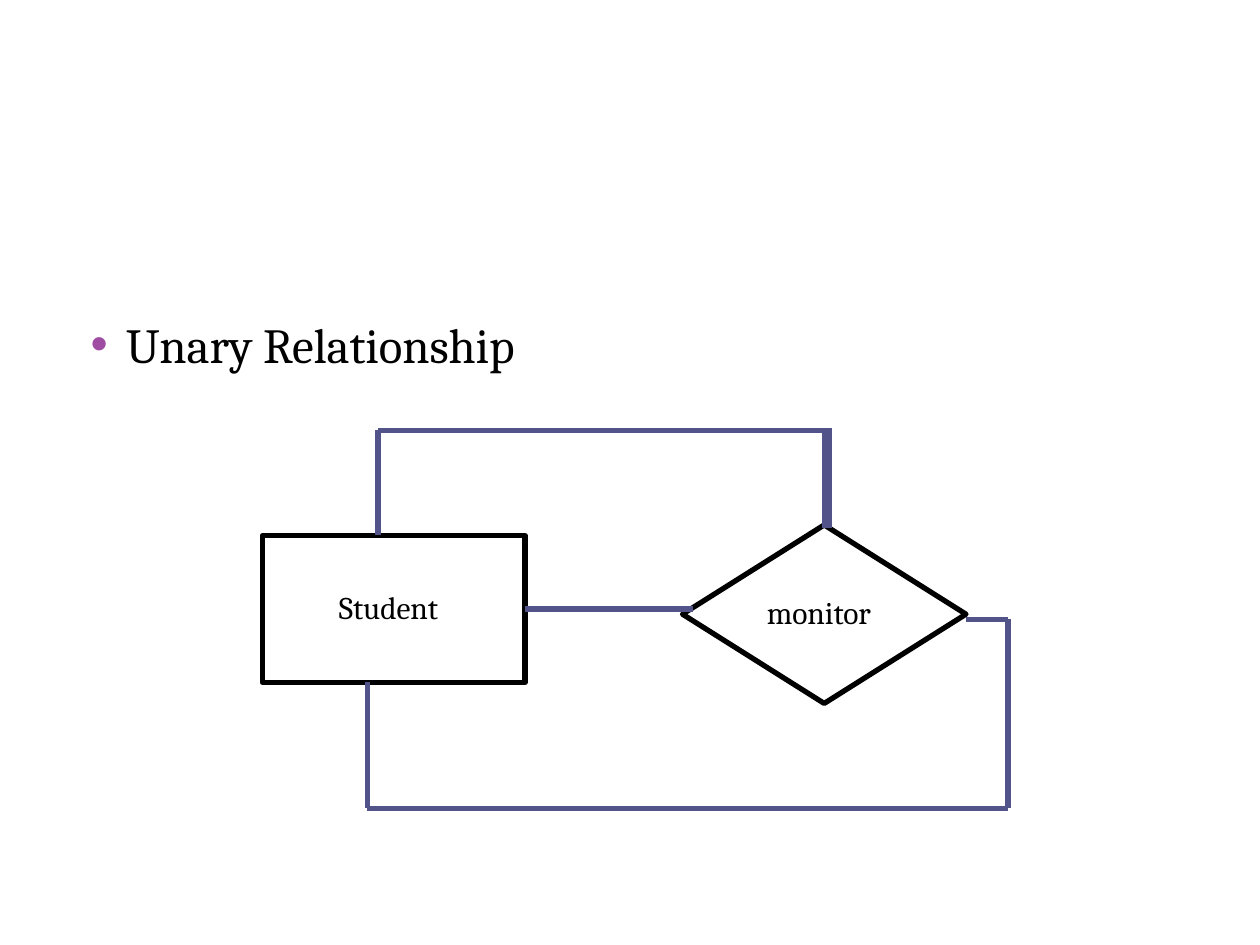
from dataclasses import dataclass

from lxml.etree import SubElement
from pptx import Presentation
from pptx.dml.color import RGBColor
from pptx.enum.shapes import MSO_CONNECTOR, MSO_SHAPE
from pptx.enum.text import MSO_ANCHOR, MSO_AUTO_SIZE, PP_ALIGN
from pptx.oxml.ns import qn
from pptx.util import Pt

BLACK = "000000"
BLUE = "525389"
PURPLE = "9F4DA2"


@dataclass
class Node:
    text: str
    kind: MSO_SHAPE
    left: float
    top: float
    width: float
    height: float


@dataclass
class Link:
    points: list[tuple[float, float]]


NODES = [
    Node("Student", MSO_SHAPE.RECTANGLE, 150, 306, 150, 84),
    Node("monitor", MSO_SHAPE.DIAMOND, 390, 300, 162, 102),
]

LINKS = [
    Link([(300, 348), (396, 348)]),
    Link([(210, 390), (210, 462), (576, 462), (576, 354), (552, 354)]),
    Link([(216, 306), (216, 246), (474, 246)]),
]


def color(code: str) -> RGBColor:
    return RGBColor.from_string(code)


def write(frame, text: str, *, size: float, align=PP_ALIGN.LEFT,
          anchor=MSO_ANCHOR.TOP, wrap=True, before=0.0, right=0.0, bottom=0.0):
    frame.margin_left = 0
    frame.margin_top, frame.margin_right = Pt(0.7), Pt(right)
    frame.margin_bottom = Pt(bottom)
    frame.auto_size = MSO_AUTO_SIZE.NONE
    frame.word_wrap = wrap
    frame.vertical_anchor = anchor
    para = frame.paragraphs[0]
    para.alignment = align
    para.space_before = Pt(before)
    run = para.add_run()
    run.text = text
    font = run.font
    font.name, font.size = "Cambria", Pt(size)
    font.color.rgb = color(BLACK)
    font._element.set("spc", "-7")
    return para


def add_bullet(para, code: str, left: float, hang: float) -> None:
    props = para._p.get_or_add_pPr()
    props.set("marL", str(Pt(left)))
    props.set("indent", str(-Pt(hang)))
    tint = SubElement(props, qn("a:buClr"))
    SubElement(tint, qn("a:srgbClr"), val=code)
    SubElement(props, qn("a:buFont"), typeface="Arial")
    SubElement(props, qn("a:buChar"), char="•")


def set_line(line, code: str, weight: float) -> None:
    line.color.rgb = color(code)
    line.width = Pt(weight)


def draw_node(slide, node: Node) -> None:
    shape = slide.shapes.add_shape(
        node.kind, Pt(node.left), Pt(node.top), Pt(node.width), Pt(node.height))
    shape.shadow.inherit = False
    shape.fill.background()
    set_line(shape.line, BLACK, 3)
    SubElement(shape.line._get_or_add_ln(), qn("a:round"))
    write(shape.text_frame, node.text, size=18, align=PP_ALIGN.CENTER,
          anchor=MSO_ANCHOR.MIDDLE, wrap=False, right=6, bottom=3)


def draw_links(slide, links: list[Link]) -> None:
    pairs = [pair for link in links for pair in zip(link.points, link.points[1:])]
    pen = slide.shapes.build_freeform(*pairs[0][0], scale=Pt(1))
    for start, end in pairs:
        if start != pairs[0][0]:
            pen.move_to(*start)
        pen.add_line_segments([end], close=False)
    shape = pen.convert_to_shape()
    shape.shadow.inherit = False
    shape.fill.background()
    set_line(shape.line, BLUE, 3)


def draw_stem(slide, x: float, top: float, end: float) -> None:
    stem = slide.shapes.add_connector(
        MSO_CONNECTOR.STRAIGHT, *map(Pt, (x, top, x, end)))
    set_line(stem.line, BLUE, 6)
    SubElement(stem._element.spPr, qn("a:effectLst"))


def main() -> None:
    deck = Presentation()
    deck.slide_width, deck.slide_height = Pt(720), Pt(540)
    slide = deck.slides.add_slide(deck.slide_layouts[1])
    title = slide.shapes.title._element
    title.getparent().remove(title)

    body = slide.placeholders[1]
    body.left, body.top, body.width, body.height = map(Pt, (51, 179, 263, 35.3))
    para = write(body.text_frame, "Unary Relationship", size=28, before=0.9)
    add_bullet(para, PURPLE, 21, 20.2)

    for node in NODES:
        draw_node(slide, node)
    draw_links(slide, LINKS)
    draw_stem(slide, 472.5, 244.6, 302)
    deck.save("out.pptx")


if __name__ == "__main__":
    main()
